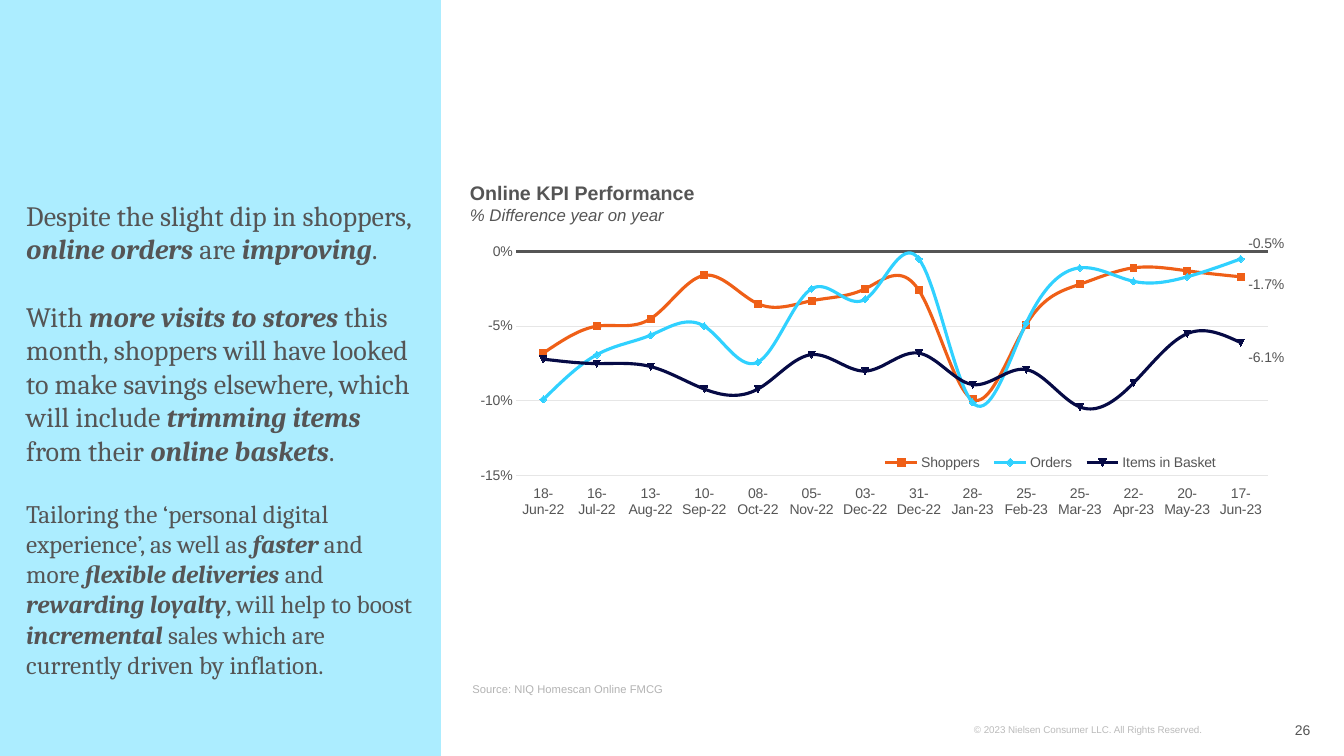
from dataclasses import dataclass

from lxml import etree
from pptx import Presentation
from pptx.chart.data import CategoryChartData
from pptx.chart.series import LineSeries
from pptx.dml.color import RGBColor
from pptx.enum.chart import XL_CHART_TYPE, XL_LABEL_POSITION, XL_LEGEND_POSITION, XL_TICK_LABEL_POSITION, XL_TICK_MARK
from pptx.enum.shapes import MSO_SHAPE
from pptx.enum.text import MSO_ANCHOR, MSO_AUTO_SIZE, PP_ALIGN
from pptx.oxml import parse_xml
from pptx.oxml.ns import qn
from pptx.slide import Slide
from pptx.text.text import TextFrame
from pptx.util import Inches, Pt

LINE = XL_CHART_TYPE.LINE
LABEL_RIGHT = XL_LABEL_POSITION.RIGHT
LEGEND_BOTTOM = XL_LEGEND_POSITION.BOTTOM
TICK_LOW = XL_TICK_LABEL_POSITION.LOW
NO_TICK = XL_TICK_MARK.NONE
RECT = MSO_SHAPE.RECTANGLE
TOP, MIDDLE, BOTTOM = MSO_ANCHOR.TOP, MSO_ANCHOR.MIDDLE, MSO_ANCHOR.BOTTOM
NO_FIT = MSO_AUTO_SIZE.NONE
LEFT, RIGHT = PP_ALIGN.LEFT, PP_ALIGN.RIGHT

WIDTH, HEIGHT = Inches(13.33), Inches(7.5)
COLS, ROWS = 128, 72
C_NS = "http://schemas.openxmlformats.org/drawingml/2006/chart"
C15_NS = "http://schemas.microsoft.com/office/drawing/2012/chart"


@dataclass(frozen=True)
class Theme:
    sans: str = "Arial"
    serif: str = "Cambria"
    text: str = "555555"
    source: str = "B3B3B3"
    legal: str = "BBBBBB"
    panel: str = "ACEDFF"
    grid: str = "E6E6E6"
    lead: int = 20
    body: int = 18
    heading: int = 14
    subheading: int = 12
    label: int = 10
    note: int = 8
    fine: int = 7


THEME = Theme()


@dataclass(frozen=True)
class Area:
    col: float
    row: float
    cols: float
    rows: float

    def emu(self) -> tuple[int, int, int, int]:
        return (int(WIDTH * self.col / COLS), int(HEIGHT * self.row / ROWS),
                int(WIDTH * self.cols / COLS), int(HEIGHT * self.rows / ROWS))


@dataclass(frozen=True)
class Para:
    text: str
    size: int
    color: str = THEME.text
    font: str = THEME.sans
    bold: bool = False
    italic: bool = False
    align: PP_ALIGN = LEFT
    before: float = 0


@dataclass(frozen=True)
class Box:
    area: Area
    paras: tuple[Para, ...]
    anchor: MSO_ANCHOR


@dataclass(frozen=True)
class Kpi:
    name: str
    color: str
    label_shift: float
    percents: tuple[float, ...]


PANEL = Area(0, 0, 42, 72)
CHART = Area(42.83, 15.84, 79.5, 36.86)
STORY = Box(Area(2.5, 40.13, 36.78, 25.06), (
    Para("Despite the slight dip in shoppers, *online orders *are *improving*.", THEME.lead, font=THEME.serif),
    Para("With *more visits to stores *this month, shoppers will have looked to make savings elsewhere, "
         "which will include *trimming items *from their *online baskets*.",
         THEME.lead, font=THEME.serif, before=24),
    Para("Tailoring the ‘personal digital experience’, as well as *faster* and more *flexible deliveries *and "
         "*rewarding loyalty*, will help to boost *incremental* sales which are currently driven by inflation.",
         THEME.body, font=THEME.serif, before=22),
), BOTTOM)
BOXES = (
    Box(Area(92.75, 68.45, 27.27, 2.11),
        (Para("© 2023 Nielsen Consumer LLC. All Rights Reserved.", THEME.fine, THEME.legal),), TOP),
    Box(Area(44.75, 16.75, 79.9, 7.25),
        (Para("Online KPI Performance", THEME.heading, bold=True),
         Para("% Difference year on year", THEME.subheading, italic=True)), TOP),
    Box(Area(115.3, 67.6, 9.5, 3.84), (Para("26", THEME.label, align=RIGHT),), MIDDLE),
    Box(Area(45, 62.9, 79.8, 3.84),
        (Para("Source: NIQ Homescan Online FMCG", THEME.note, THEME.source),), BOTTOM),
)
PERIODS = ("18-Jun-22", "16-Jul-22", "13-Aug-22", "10-Sep-22", "08-Oct-22", "05-Nov-22", "03-Dec-22",
           "31-Dec-22", "28-Jan-23", "25-Feb-23", "25-Mar-23", "22-Apr-23", "20-May-23", "17-Jun-23")
KPIS = (
    Kpi("Shoppers", "EF5F17", 0.02,
        (-6.8, -5.0, -4.5, -1.6, -3.5, -3.3, -2.5, -2.6, -9.9, -4.9, -2.2, -1.1, -1.3, -1.7)),
    Kpi("Orders", "30D1FF", -0.04,
        (-9.9, -6.9, -5.6, -5.0, -7.4, -2.5, -3.2, -0.5, -10.1, -4.8, -1.1, -2.0, -1.7, -0.5)),
    Kpi("Items in Basket", "060A45", 0.04,
        (-7.2, -7.5, -7.7, -9.2, -9.2, -6.9, -8.0, -6.8, -8.9, -7.9, -10.4, -8.8, -5.5, -6.1)),
)


def rgb(color: str) -> RGBColor:
    return RGBColor.from_string(color)


def write(tf: TextFrame, box: Box) -> None:
    tf.word_wrap = True
    tf.auto_size = NO_FIT
    tf.vertical_anchor = box.anchor
    tf.margin_left = tf.margin_right = 0
    tf.margin_top = tf.margin_bottom = Inches(0.05)
    for i, para in enumerate(box.paras):
        p = tf.add_paragraph() if i else tf.paragraphs[0]
        p.alignment = para.align
        p.space_before = Pt(para.before)
        p.font.size, p.font.name = Pt(para.size), para.font
        p.font.bold, p.font.italic = para.bold, para.italic
        p.font.color.rgb = rgb(para.color)
        for j, part in enumerate(para.text.split("*")):
            r = p.add_run()
            r.text = part
            if j % 2:
                r.font.bold = r.font.italic = True


def manual_layout(**values: str | float) -> etree._Element:
    layout = parse_xml(f'<c:layout xmlns:c="{C_NS}"><c:manualLayout/></c:layout>')
    for tag, value in values.items():
        etree.SubElement(layout[0], qn(f"c:{tag}")).set("val", str(value))
    return layout


def style_series(series: LineSeries, kpi: Kpi) -> None:
    series.smooth = True
    series.format.line.color.rgb = rgb(kpi.color)
    series.format.line.width = Pt(2.25)
    series.marker.style = None
    label = series.points[len(PERIODS) - 1].data_label
    label.font.size = Pt(THEME.label)
    label.font.name = THEME.sans
    label.font.color.rgb = rgb(THEME.text)
    label.position = LABEL_RIGHT
    series.data_labels.show_value = False
    labels = series.data_labels._element
    labels.find(qn("c:dLbl")).find(qn("c:idx")).addnext(manual_layout(x=0, y=kpi.label_shift))
    for old in labels.findall(qn("c:showLeaderLines")):
        labels.remove(old)
    labels.append(parse_xml(
        f'<c:extLst xmlns:c="{C_NS}"><c:ext uri="{{CE6537A1-D6FC-4f65-9D91-7224C49458BB}}" '
        f'xmlns:c15="{C15_NS}"><c15:showLeaderLines val="1"/></c:ext></c:extLst>'))


def add_kpi_chart(s: Slide) -> None:
    data = CategoryChartData(number_format="0.0%")
    data.categories = PERIODS
    for kpi in KPIS:
        data.add_series(kpi.name, [round(v / 100, 3) for v in kpi.percents])
    chart = s.shapes.add_chart(LINE, *CHART.emu(), data).chart
    chart.has_title = False
    chart.font.size, chart.font.name = Pt(THEME.label), THEME.sans
    chart.font.color.rgb = rgb(THEME.text)

    cat, val = chart.category_axis, chart.value_axis
    for axis in (cat, val):
        axis.major_tick_mark = axis.minor_tick_mark = NO_TICK
    cat.tick_label_position = TICK_LOW
    cat.format.line.color.rgb = rgb(THEME.text)
    cat.format.line.width = Pt(2)
    val.minimum_scale, val.maximum_scale, val.major_unit = -0.15, 0, 0.05
    val.tick_labels.number_format = "0%"
    val.tick_labels.number_format_is_linked = False
    val.format.line.fill.background()
    val.major_gridlines.format.line.color.rgb = rgb(THEME.grid)
    val.major_gridlines.format.line.width = Pt(0.75)

    plot = chart.plots[0]
    plot.vary_by_categories = False
    for series, kpi in zip(plot.series, KPIS):
        style_series(series, kpi)

    chart.has_legend = True
    chart.legend.position = LEGEND_BOTTOM
    chart.legend.include_in_layout = False
    legend = chart.legend._element
    for old in legend.findall(qn("c:layout")):
        legend.remove(old)
    legend.find(qn("c:legendPos")).addnext(
        manual_layout(xMode="edge", yMode="edge", x=0.51, y=0.73, w=0.42, h=0.07))
    area = plot._element.getparent()
    for old in area.findall(qn("c:layout")):
        area.remove(old)
    area.insert(0, manual_layout(layoutTarget="inner", xMode="edge", yMode="edge",
                                 x=0.08, y=0.22, w=0.9, h=0.58))


def main() -> None:
    prs = Presentation()
    prs.slide_width, prs.slide_height = WIDTH, HEIGHT
    s = prs.slides.add_slide(prs.slide_layouts[5])
    title = s.shapes.title
    title.left, title.top, title.width, title.height = STORY.area.emu()
    write(title.text_frame, STORY)
    panel = s.shapes.add_shape(RECT, *PANEL.emu())
    panel.shadow.inherit = False
    panel.fill.solid()
    panel.fill.fore_color.rgb = rgb(THEME.panel)
    panel.line.fill.background()
    title.element.addprevious(panel.element)
    for box in BOXES:
        write(s.shapes.add_textbox(*box.area.emu()).text_frame, box)
    add_kpi_chart(s)
    prs.save("out.pptx")


if __name__ == "__main__":
    main()
